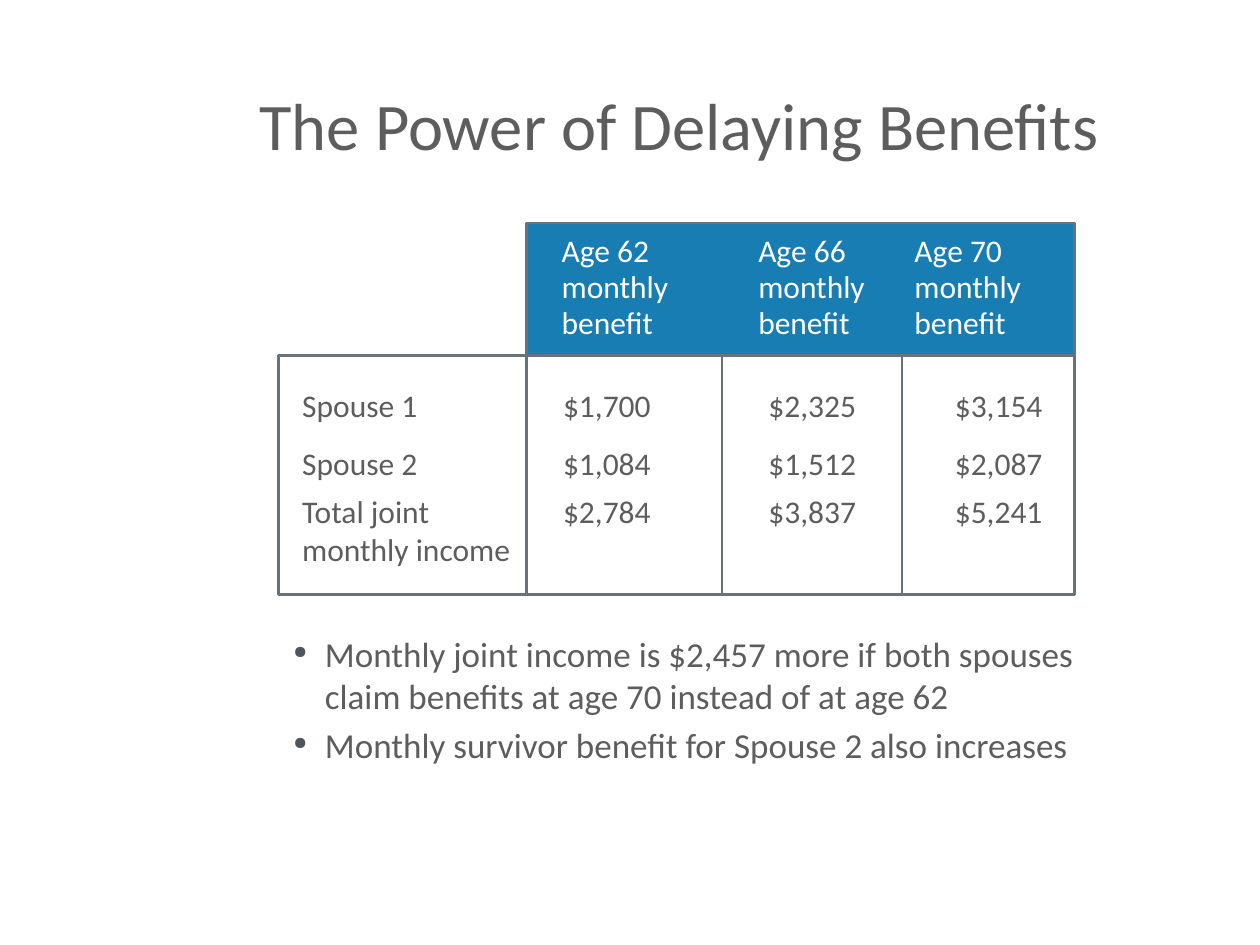
from lxml import etree
from pptx import Presentation
from pptx.dml.color import RGBColor as RGB
from pptx.enum.shapes import MSO_CONNECTOR as Link, MSO_SHAPE as Shape
from pptx.enum.text import MSO_ANCHOR as Anchor, PP_ALIGN as Align
from pptx.oxml.ns import qn
from pptx.util import Inches, Pt

HUES = {"text": "5D5D5D", "blue": "177DB3", "line": "67737A",
        "dot": "4D565C", "white": "FFFFFF"}


def add_text(para, text, size, hue):
    """Add one run per line of text, with line breaks between them."""
    for i, line in enumerate(text.split("\n")):
        if i:
            para.add_line_break()
        run = para.add_run()
        run.text = line
        run.font.name = "Calibri"
        run.font.size = Pt(size)
        run.font.color.rgb = RGB.from_string(HUES[hue])


def add_frame(x, y, w, h):
    """Add a wrapping text box and return its text frame."""
    box = slide.shapes.add_textbox(Inches(x), Inches(y), Inches(w), Inches(h))
    box.text_frame.word_wrap = True
    return box.text_frame


deck = Presentation()
deck.slide_width, deck.slide_height = Inches(10), Inches(7.5)
slide = deck.slides.add_slide(deck.slide_layouts[5])

# Title
title = slide.shapes.title
title.left, title.top = Inches(1.96), Inches(0.62)
title.width, title.height = Inches(9.32), Inches(0.72)
title.text_frame.vertical_anchor = Anchor.MIDDLE
para = title.text_frame.paragraphs[0]
para.alignment = Align.LEFT
add_text(para, "The Power of Delaying Benefits", 38, "text")

# Header band and body frame
left, mid, right = 2.21, 4.18, 8.53
top, split, end = 1.77, 2.82, 4.72
for x, y, low, fill in [(mid, top, split, "blue"), (left, split, end, None)]:
    rect = slide.shapes.add_shape(Shape.RECTANGLE, Inches(x), Inches(y),
                                  Inches(right - x), Inches(low - y))
    rect.shadow.inherit = False
    rect.line.color.rgb = RGB.from_string(HUES["line"])
    rect.line.width = Pt(1.5)
    if fill:
        rect.fill.solid()
        rect.fill.fore_color.rgb = RGB.from_string(HUES[fill])
    else:
        rect.fill.background()

# Column rules
for x in (mid, 5.73, 7.16):
    rule = slide.shapes.add_connector(Link.STRAIGHT, Inches(x), Inches(split),
                                      Inches(x), Inches(end))
    rule.line.color.rgb = RGB.from_string(HUES["line"])
    rule.line.width = Pt(1.5)
    etree.SubElement(rule._element.spPr, qn("a:effectLst"))

# Column heads
for x, age in [(4.36, 62), (5.92, 66), (7.16, 70)]:
    para = add_frame(x, 1.81, 1.3, 1).paragraphs[0]
    para.line_spacing = 0.95
    add_text(para, f"Age {age}\nmonthly\nbenefit", 18, "white")

# Body rows, set on shared tab stops
rows = [
    ("Spouse 1\t$1,700\t$2,325\t$3,154", 1.25, 6),
    ("Spouse 2\t$1,084\t$1,512\t$2,087", 1.25, 6),
    ("Total joint\t$2,784\t$3,837\t$5,241\nmonthly income", Pt(21.6), 0),
]
frame = add_frame(2.3, 2.94, 6.69, 1.64)
for i, (text, pitch, after) in enumerate(rows):
    para = frame.add_paragraph() if i else frame.paragraphs[0]
    para.line_spacing = pitch
    para.space_after = Pt(after)
    tabs = etree.SubElement(para._p.get_or_add_pPr(), qn("a:tabLst"))
    for stop in (2.07, 3.7, 5.18):
        etree.SubElement(tabs, qn("a:tab"), pos=str(Inches(stop)), algn="l")
    add_text(para, text, 18, "text")

# Bullets
notes = [
    "Monthly joint income is $2,457 more if both spouses claim benefits "
    "at age 70 instead of at age 62",
    "Monthly survivor benefit for Spouse 2 also increases",
]
frame = add_frame(2.23, 4.97, 6.49, 1.75)
for i, text in enumerate(notes):
    para = frame.add_paragraph() if i else frame.paragraphs[0]
    if i:
        para.space_before = Pt(4)
    props = para._p.get_or_add_pPr()
    props.set("marL", str(Inches(0.25)))
    props.set("indent", str(Inches(-0.25)))
    hue = etree.SubElement(props, qn("a:buClr"))
    etree.SubElement(hue, qn("a:srgbClr"), val=HUES["dot"])
    etree.SubElement(props, qn("a:buSzPct"), val="50000")
    etree.SubElement(props, qn("a:buChar"), char="●")
    add_text(para, text, 20, "text")

deck.save("out.pptx")
